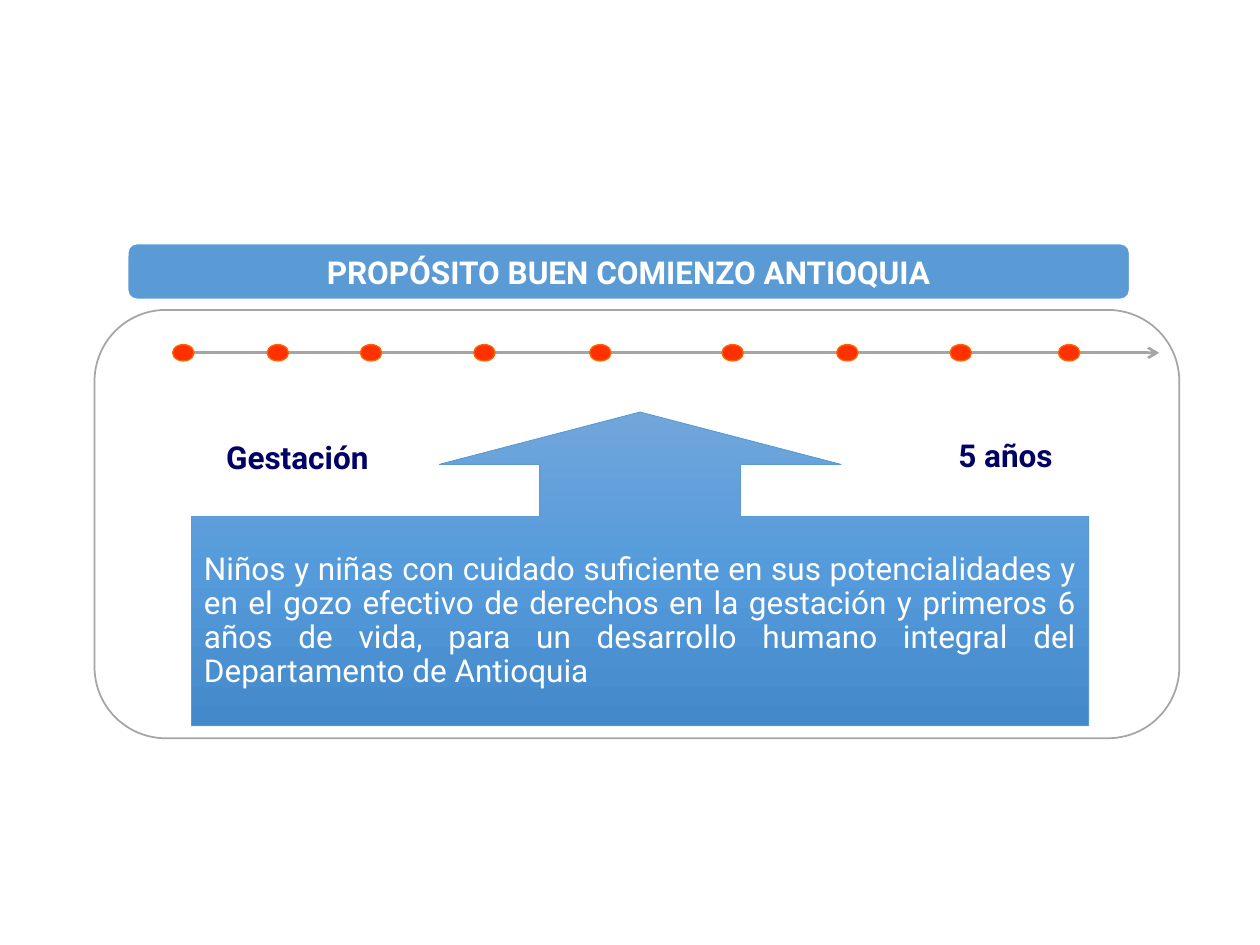
from copy import deepcopy
from typing import NamedTuple

from lxml.etree import SubElement
from pptx import Presentation
from pptx.dml.color import RGBColor
from pptx.enum.shapes import MSO_CONNECTOR, MSO_SHAPE
from pptx.enum.text import MSO_ANCHOR, PP_ALIGN
from pptx.oxml.ns import qn
from pptx.util import Inches, Pt

FONT = "Roboto"
WHITE = RGBColor(0xFF, 0xFF, 0xFF)
GRAY = RGBColor(0xA5, 0xA5, 0xA5)
BLUE = RGBColor(0x5B, 0x9B, 0xD5)
NAVY = RGBColor(0x00, 0x00, 0x66)
RED = RGBColor(0xFF, 0x31, 0x01)
ORANGE = RGBColor(0xFF, 0x66, 0x00)
CALLOUT_STOPS = (
    (0, RGBColor(0x71, 0xA6, 0xDB)),
    (0.5, RGBColor(0x55, 0x9B, 0xDB)),
    (1, RGBColor(0x44, 0x8A, 0xCA)),
)

TIMELINE_Y = 2.8
MILESTONE_WIDTH, MILESTONE_HEIGHT = 0.17, 0.13
MILESTONE_LEFTS = (1.37, 2.12, 2.86, 3.76, 4.68, 5.73, 6.64, 7.54, 8.4)


class Area(NamedTuple):
    left: float
    top: float
    width: float
    height: float

    def lengths(self) -> list:
        return [Inches(value) for value in self]


class Label(NamedTuple):
    text: str
    area: Area


AGE_LABELS = (
    Label("Gestación", Area(1.54, 3.43, 1.64, 0.4)),
    Label("5 años", Area(7.27, 3.41, 1.42, 0.4)),
)


def write_text(box, text: str, *, color=WHITE, bold=False,
               align=PP_ALIGN.CENTER, line_spacing=None) -> None:
    frame = box.text_frame
    frame.word_wrap = True
    frame.vertical_anchor = MSO_ANCHOR.MIDDLE
    para = frame.paragraphs[0]
    para.alignment = align
    para.line_spacing = line_spacing
    span = para.add_run()
    span.text = text
    span.font.name = FONT
    span.font.size = Pt(18)
    span.font.bold = bold
    span.font.color.rgb = color


def add_outlined_shape(page, kind, area: Area, *, fill: RGBColor,
                       line: RGBColor, line_width: float):
    shape = page.shapes.add_shape(kind, *area.lengths())
    shape.shadow.inherit = False
    shape.fill.solid()
    shape.fill.fore_color.rgb = fill
    shape.line.color.rgb = line
    shape.line.width = Pt(line_width)
    return shape


def apply_vertical_gradient(shape, stops) -> None:
    """Fill the shape from top to bottom with (position, colour) stops."""
    shape.fill.gradient()
    shape.fill.gradient_angle = 270
    stop_list = shape._element.spPr.find(".//" + qn("a:gsLst"))
    while len(stop_list) < len(stops):
        stop_list.append(deepcopy(stop_list[0]))
    for stop, (position, color) in zip(shape.fill.gradient_stops, stops):
        stop.position = position
        stop.color.rgb = color


def add_timeline(page) -> None:
    y = Inches(TIMELINE_Y)
    timeline = page.shapes.add_connector(
        MSO_CONNECTOR.STRAIGHT, Inches(1.38), y, Inches(9.2), y)
    timeline.line.color.rgb = GRAY
    timeline.line.width = Pt(1.5)
    properties = timeline._element.spPr
    SubElement(properties.find(qn("a:ln")), qn("a:tailEnd"), type="arrow")
    SubElement(properties, qn("a:effectLst"))

    top = TIMELINE_Y - MILESTONE_HEIGHT / 2
    for left in MILESTONE_LEFTS:
        add_outlined_shape(
            page, MSO_SHAPE.OVAL,
            Area(left, top, MILESTONE_WIDTH, MILESTONE_HEIGHT),
            fill=RED, line=ORANGE, line_width=0.75)


def add_purpose_callout(page) -> None:
    callout = add_outlined_shape(
        page, MSO_SHAPE.UP_ARROW_CALLOUT, Area(1.52, 3.27, 7.12, 2.49),
        fill=BLUE, line=BLUE, line_width=0.5)
    for index, value in enumerate((0.64, 0.64, 0.167, 0.667)):
        callout.adjustments[index] = value
    apply_vertical_gradient(callout, CALLOUT_STOPS)
    write_text(
        callout,
        "Niños y niñas con cuidado suficiente en sus potencialidades y en el "
        "gozo efectivo de derechos en la gestación y primeros 6 años de vida, "
        "para un desarrollo humano integral del Departamento de Antioquia",
        align=PP_ALIGN.JUSTIFY, line_spacing=0.9)


def main() -> None:
    deck = Presentation()
    deck.slide_width, deck.slide_height = Inches(10), Inches(7.5)
    page = deck.slides.add_slide(deck.slide_layouts[6])

    add_outlined_shape(page, MSO_SHAPE.ROUNDED_RECTANGLE,
                       Area(0.75, 2.46, 8.61, 3.4),
                       fill=WHITE, line=GRAY, line_width=1)
    for label in AGE_LABELS:
        box = page.shapes.add_textbox(*label.area.lengths())
        write_text(box, label.text, color=NAVY, bold=True)
    title = add_outlined_shape(page, MSO_SHAPE.ROUNDED_RECTANGLE,
                               Area(1.01, 1.93, 7.96, 0.45),
                               fill=BLUE, line=WHITE, line_width=1.5)
    write_text(title, "PROPÓSITO BUEN COMIENZO ANTIOQUIA", bold=True)
    add_purpose_callout(page)
    add_timeline(page)

    deck.save("out.pptx")


if __name__ == "__main__":
    main()
